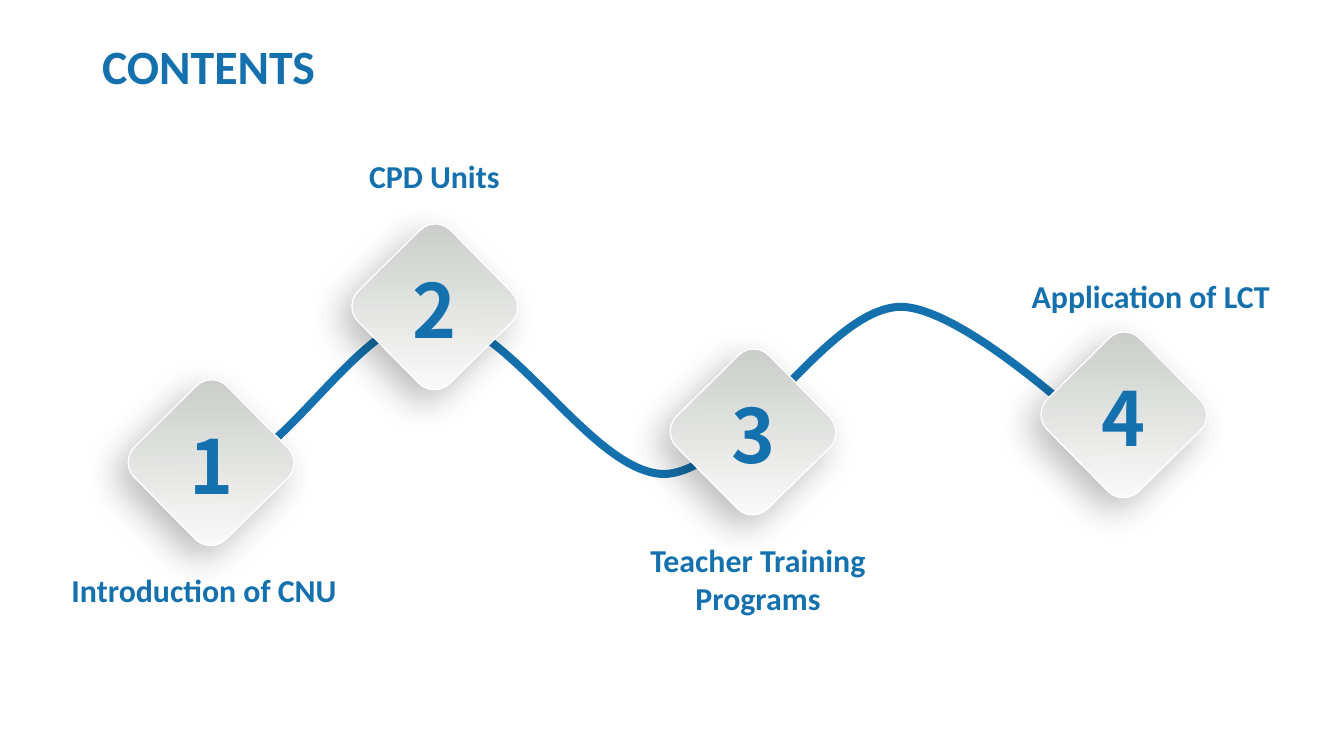
from lxml import etree
from pptx import Presentation
from pptx.dml.color import RGBColor
from pptx.enum import shapes, text
from pptx.oxml import ns
from pptx.util import Pt

BLUE = RGBColor(0x14, 0x71, 0xAE)
GREY = RGBColor(0xC9, 0xCB, 0xC8)
PALE = RGBColor(0xFC, 0xFC, 0xFC)
WHITE = RGBColor(0xFF, 0xFF, 0xFF)
LEFT, CENTER = text.PP_ALIGN.LEFT, text.PP_ALIGN.CENTER

deck = Presentation()
deck.slide_width, deck.slide_height = Pt(1012.5), Pt(569.5)
page = deck.slides.add_slide(deck.slide_layouts[6])


def add_text(words, left, top, width, height, size, align=CENTER, wrap=True, font="Calibri"):
    box = page.shapes.add_textbox(Pt(left), Pt(top), Pt(width), Pt(height))
    box.text_frame.word_wrap = wrap
    para = box.text_frame.paragraphs[0]
    para.alignment = align
    span = para.add_run()
    span.text = words
    span.font.color.rgb = BLUE
    for key, value in {"name": font, "size": Pt(size), "bold": True}.items():
        setattr(span.font, key, value)


# Winding road: a start point, then two handles and an end for each bend
road_points = [
    (158.4, 356.4),
    (211, 357.1), (268.6, 238.3), (325.4, 238.3),
    (382.3, 238.3), (445, 356.4), (500.4, 357.1),
    (557.3, 355), (621.4, 232.6), (678.2, 231.1),
    (732.2, 231.1), (851, 349.9), (851.8, 348.5),
]
start, *bends = [(Pt(x), Pt(y)) for x, y in road_points]
builder = page.shapes.build_freeform(*start)
builder.add_line_segments(bends, close=False)
road = builder.convert_to_shape()
road.shadow.inherit = False
road.fill.background()
road.line.color.rgb = BLUE
road.line.width = Pt(6)

# Turn each three straight segments into one Bézier bend
segments = list(road._element.iter(ns.qn("a:lnTo")))
outline = segments[0].getparent()
for first in range(0, len(segments), 3):
    curve = etree.SubElement(outline, ns.qn("a:cubicBezTo"))
    for segment in segments[first:first + 3]:
        curve.append(segment[0])
        outline.remove(segment)

# Step labels
label_rows = [
    ("Introduction of CNU", 46.8, 426.2, 254.9, 36, LEFT),
    ("CPD Units", 228.2, 114.5, 198, 36, CENTER),
    ("Teacher Training Programs", 449.3, 403.9, 243.4, 65.5, CENTER),
    ("Application of LCT", 733, 205.2, 267.8, 36, CENTER),
]
for words, left, top, width, height, align in label_rows:
    add_text(words, left, top, width, height, 24, align)

# Numbered diamonds, placed by their centres
SIDE = 97.9
diamond_centres = [(159.1, 348.5), (327.6, 231.1), (567.4, 325.4), (846.7, 312.5)]
for number, (x, y) in enumerate(diamond_centres, 1):
    diamond = page.shapes.add_shape(
        shapes.MSO_SHAPE.ROUNDED_RECTANGLE,
        Pt(x - SIDE / 2), Pt(y - SIDE / 2), Pt(SIDE), Pt(SIDE))
    diamond.rotation = 315.4
    diamond.fill.gradient()
    diamond.fill.gradient_angle = 225
    for stop, color, position in zip(diamond.fill.gradient_stops, (GREY, PALE), (0, 1)):
        stop.color.rgb = color
        stop.position = position
    diamond.line.color.rgb = WHITE
    diamond.line.width = Pt(1)

    # Soft shadow towards the lower left
    diamond.shadow.inherit = False
    effects = diamond._element.spPr.find(ns.qn("a:effectLst"))
    shadow = etree.SubElement(
        effects, ns.qn("a:outerShdw"), blurRad=str(Pt(27)), dist=str(Pt(12)),
        dir="8100000", algn="ctr", rotWithShape="0")
    tint = etree.SubElement(shadow, ns.qn("a:srgbClr"), val="000000")
    etree.SubElement(tint, ns.qn("a:alpha"), val="26000")

    add_text(str(number), x - 24.85, y - 36, 49.7, 75.6, 56.2,
             wrap=False, font="Noto Sans CJK SC")

# Title
add_text("CONTENTS", 69.8, 23.8, 368.6, 51.1, 36, LEFT)

deck.save("out.pptx")
